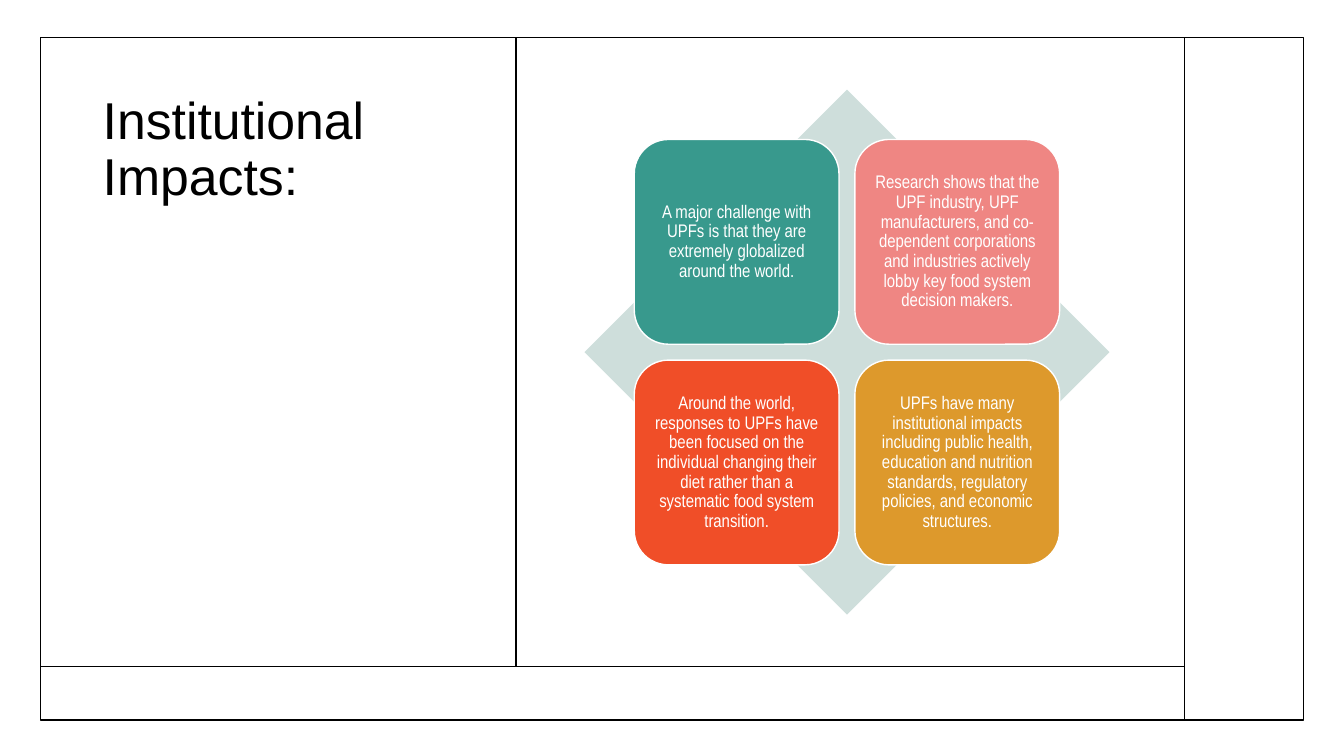
from dataclasses import dataclass

import pptx
import pptx.dml.color
import pptx.enum.shapes
import pptx.enum.text
import pptx.oxml.ns
import pptx.shapes.autoshape
import pptx.slide
import pptx.text.text
import pptx.util
from lxml import etree
from pptx.dml.color import RGBColor
from pptx.util import Cm

BLACK = RGBColor(0x00, 0x00, 0x00)
WHITE = RGBColor(0xFF, 0xFF, 0xFF)
PALE_TEAL = RGBColor(0xCE, 0xDE, 0xDB)
TEAL = RGBColor(0x38, 0x99, 0x8D)
PINK = RGBColor(0xEF, 0x86, 0x83)
ORANGE = RGBColor(0xF0, 0x4E, 0x28)
GOLD = RGBColor(0xDD, 0x99, 0x2C)

SHAPES = pptx.enum.shapes.MSO_SHAPE
FRAME_LEFT, FRAME_TOP = 1.02, 0.94
FRAME_WIDTH, FRAME_HEIGHT = 31.83, 17.2
SIDEBAR_X, FOOTER_Y, TITLE_EDGE_X = 29.85, 16.79, 13.0
CONTENT_TOP, CONTENT_HEIGHT = 2.26, 13.23
DIAMOND_LEFT = 14.73
CARD_SIZE, CARD_PITCH = 5.16, 5.56
CARD_MARGIN = (CONTENT_HEIGHT - CARD_SIZE - CARD_PITCH) / 2


@dataclass(frozen=True)
class Divider:
    x1: float
    y1: float
    x2: float
    y2: float


@dataclass(frozen=True)
class Impact:
    text: str
    color: RGBColor


DIVIDERS = [
    Divider(FRAME_LEFT, FOOTER_Y, SIDEBAR_X, FOOTER_Y),
    Divider(TITLE_EDGE_X, FRAME_TOP, TITLE_EDGE_X, FOOTER_Y),
    Divider(SIDEBAR_X, FRAME_TOP, SIDEBAR_X, FRAME_TOP + FRAME_HEIGHT),
]

IMPACTS = [
    Impact("A major challenge with UPFs is that they are extremely globalized "
           "around the world.", TEAL),
    Impact("Research shows that the UPF industry, UPF manufacturers, and "
           "co-dependent corporations and industries actively lobby key food "
           "system decision makers.", PINK),
    Impact("Around the world, responses to UPFs have been focused on the "
           "individual changing their diet rather than a systematic food "
           "system transition.", ORANGE),
    Impact("UPFs have many institutional impacts including public health, "
           "education and nutrition standards, regulatory policies, and "
           "economic structures.", GOLD),
]


def add_panel(
    slide: pptx.slide.Slide, kind: SHAPES, left: float, top: float,
    width: float, height: float, fill: RGBColor | None, line: RGBColor | None,
) -> pptx.shapes.autoshape.Shape:
    panel = slide.shapes.add_shape(kind, Cm(left), Cm(top), Cm(width), Cm(height))
    panel.shadow.inherit = False
    if fill is None:
        panel.fill.background()
    else:
        panel.fill.solid()
        panel.fill.fore_color.rgb = fill
    if line is None:
        panel.line.fill.background()
    else:
        panel.line.color.rgb = line
        panel.line.width = pptx.util.Pt(1)
    return panel


def add_divider(slide: pptx.slide.Slide, divider: Divider) -> None:
    rule = slide.shapes.add_connector(
        pptx.enum.shapes.MSO_CONNECTOR.STRAIGHT,
        Cm(divider.x1), Cm(divider.y1), Cm(divider.x2), Cm(divider.y2))
    rule.line.color.rgb = BLACK
    rule.line.width = pptx.util.Pt(1)
    etree.SubElement(rule._element.spPr, pptx.oxml.ns.qn("a:effectLst"))


def write_text(
    frame: pptx.text.text.TextFrame, text: str, font: str, size: float,
    color: RGBColor, alignment: pptx.enum.text.PP_ALIGN,
) -> None:
    frame.word_wrap = True
    paragraph = frame.paragraphs[0]
    paragraph.alignment = alignment
    paragraph.line_spacing = 0.9
    run = paragraph.add_run()
    run.text = text
    run.font.name = font
    run.font.size = pptx.util.Pt(size)
    run.font.color.rgb = color


def add_impact(slide: pptx.slide.Slide, impact: Impact, index: int) -> None:
    row, column = divmod(index, 2)
    card = add_panel(
        slide, SHAPES.ROUNDED_RECTANGLE,
        DIAMOND_LEFT + CARD_MARGIN + column * CARD_PITCH,
        CONTENT_TOP + CARD_MARGIN + row * CARD_PITCH,
        CARD_SIZE, CARD_SIZE, impact.color, WHITE)
    frame = card.text_frame
    frame.margin_left = frame.margin_right = Cm(0.13)
    frame.margin_top = frame.margin_bottom = Cm(0.13)
    frame.vertical_anchor = pptx.enum.text.MSO_ANCHOR.MIDDLE
    write_text(frame, impact.text, "Arial Narrow", 13, WHITE,
               pptx.enum.text.PP_ALIGN.CENTER)


def main() -> None:
    presentation = pptx.Presentation()
    presentation.slide_width = Cm(33.87)
    presentation.slide_height = Cm(19.05)
    slide = presentation.slides.add_slide(presentation.slide_layouts[6])

    add_panel(slide, SHAPES.RECTANGLE, FRAME_LEFT, FRAME_TOP,
              FRAME_WIDTH, FRAME_HEIGHT, None, BLACK)
    title = slide.shapes.add_textbox(
        Cm(2.34), Cm(CONTENT_TOP), Cm(9.53), Cm(CONTENT_HEIGHT))
    write_text(title.text_frame, "Institutional Impacts:", "Arial", 37, BLACK,
               pptx.enum.text.PP_ALIGN.LEFT)
    for divider in DIVIDERS:
        add_divider(slide, divider)
    add_panel(slide, SHAPES.DIAMOND, DIAMOND_LEFT, CONTENT_TOP,
              CONTENT_HEIGHT, CONTENT_HEIGHT, PALE_TEAL, None)
    for index, impact in enumerate(IMPACTS):
        add_impact(slide, impact, index)

    presentation.save("out.pptx")


if __name__ == "__main__":
    main()
